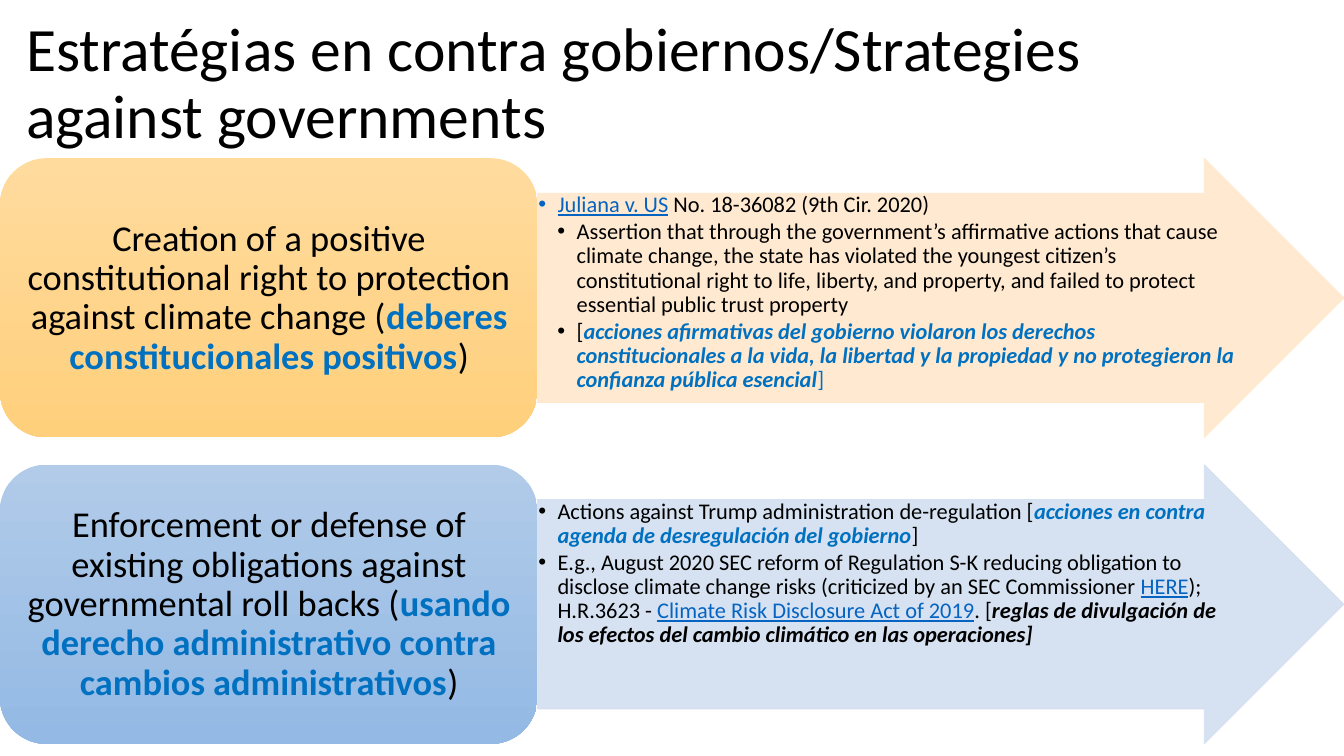
from lxml import etree
from pptx import Presentation
from pptx.dml.color import RGBColor
from pptx.enum.shapes import MSO_SHAPE
from pptx.enum.text import MSO_ANCHOR, PP_ALIGN
from pptx.oxml.ns import qn
from pptx.util import Inches, Pt

ARROW = MSO_SHAPE.RIGHT_ARROW
ROUNDED = MSO_SHAPE.ROUNDED_RECTANGLE
TOP, MIDDLE = MSO_ANCHOR.TOP, MSO_ANCHOR.MIDDLE
LEFT, CENTER = PP_ALIGN.LEFT, PP_ALIGN.CENTER
BLACK, BLUE, LINK = "000000", "0070C0", "0563C1"


def rgb(value):
    return RGBColor.from_string(value)


class StrategySlide:
    """Draws titles, strategy cards and detail arrows in one style on a slide."""

    font = "Calibri"
    indent = 0.19

    def __init__(self, slide):
        self.slide = slide

    def shape(self, kind, left, top, width, height):
        shape = self.slide.shapes.add_shape(
            kind, Inches(left), Inches(top), Inches(width), Inches(height))
        shape.shadow.inherit = False
        return shape

    def arrow(self, top, color):
        arrow = self.shape(ARROW, 5.33, top, 8, 2.77)
        arrow.adjustments[0] = 0.75
        arrow.adjustments[1] = 0.5
        arrow.fill.solid()
        arrow.fill.fore_color.rgb = rgb(color)
        arrow.line.color.rgb = rgb(color)
        arrow.line.width = Pt(0.5)
        for node in arrow.element.spPr.iter(qn("a:srgbClr")):
            etree.SubElement(node, qn("a:alpha"), val="90000")

    def card(self, top, colors):
        card = self.shape(ROUNDED, 0, top, 5.33, 2.77)
        card.fill.gradient()
        card.fill.gradient_angle = 270
        for stop, color in zip(card.fill.gradient_stops, colors):
            stop.color.rgb = rgb(color)
        card.line.fill.background()

    def bullet(self, paragraph, level, color):
        properties = paragraph._p.get_or_add_pPr()
        properties.set("marL", str(Inches(self.indent * level)))
        properties.set("indent", str(-Inches(self.indent)))
        bullet_color = etree.SubElement(properties, qn("a:buClr"))
        etree.SubElement(bullet_color, qn("a:srgbClr"), val=color)
        etree.SubElement(properties, qn("a:buFont"), typeface="Arial")
        etree.SubElement(properties, qn("a:buChar"), char="•")

    def text(self, box, paragraphs, size, anchor=MIDDLE, align=LEFT,
             insets=(0.1, 0.05), after=0):
        frame = self.slide.shapes.add_textbox(*map(Inches, box)).text_frame
        frame.word_wrap = True
        frame.vertical_anchor = anchor
        frame.margin_left = frame.margin_right = Inches(insets[0])
        frame.margin_top = frame.margin_bottom = Inches(insets[1])
        for number, (level, runs) in enumerate(paragraphs):
            paragraph = frame.add_paragraph() if number else frame.paragraphs[0]
            paragraph.alignment = align
            paragraph.line_spacing = 0.9
            paragraph.space_after = Pt(after)
            if level:
                self.bullet(paragraph, level, runs[0][1])
            paragraph.font.name = self.font
            paragraph.font.size = Pt(size)
            for words, color, marks in runs:
                run = paragraph.add_run()
                run.text = words
                run.font.color.rgb = rgb(color)
                run.font.bold = "b" in marks
                run.font.italic = "i" in marks
                run.font.underline = "u" in marks

    def strategy(self, top, arrow_color, card_colors, heading, details):
        self.arrow(top, arrow_color)
        self.text((5.33, top + 0.34, 6.96, 2.08), details, 16, anchor=TOP,
                  insets=(0.01, 0.01), after=2)
        self.card(top, card_colors)
        self.text((0.14, top + 0.14, 5.06, 2.5), [(0, heading)], 26,
                  align=CENTER, insets=(0.11, 0.05))


def main():
    deck = Presentation()
    deck.slide_width, deck.slide_height = Inches(13.33), Inches(7.5)
    page = StrategySlide(deck.slides.add_slide(deck.slide_layouts[6]))

    title = "Estratégias en contra gobiernos/Strategies against governments"
    page.text((0.16, 0.12, 11.5, 1.45), [(0, [(title, BLACK, "")])], 44)

    strategies = [
        ("FFE8CC", ("FFDB9E", "FFD07C"), [
            ("Creation of a positive constitutional right to protection "
             "against climate change (", BLACK, ""),
            ("deberes constitucionales positivos", BLUE, "b"),
            (")", BLACK, ""),
        ], [
            (1, [("Juliana v. US", LINK, "u"),
                 (" No. 18-36082 (9th Cir. 2020)", BLACK, "")]),
            (2, [("Assertion that through the government’s affirmative actions "
                  "that cause climate change, the state has violated the "
                  "youngest citizen’s constitutional right to life, liberty, "
                  "and property, and failed to protect essential public trust "
                  "property", BLACK, "")]),
            (2, [("[", BLACK, ""),
                 ("acciones afirmativas del gobierno violaron los derechos "
                  "constitucionales a la vida, la libertad y la propiedad y no "
                  "protegieron la confianza pública esencial", BLUE, "bi"),
                 ("]", BLUE, "")]),
        ]),
        ("D2DFF0", ("B1CBE9", "93B9E4"), [
            ("Enforcement or defense of existing obligations against "
             "governmental roll backs (", BLACK, ""),
            ("usando derecho administrativo contra cambios administrativos",
             BLUE, "b"),
            (")", BLACK, ""),
        ], [
            (1, [("Actions against Trump administration de-regulation [",
                  BLACK, ""),
                 ("acciones en contra agenda de desregulación del gobierno",
                  BLUE, "bi"),
                 ("]", BLACK, "")]),
            (1, [("E.g., August 2020 SEC reform of Regulation S-K reducing "
                  "obligation to disclose climate change risks (criticized by "
                  "an SEC Commissioner ", BLACK, ""),
                 ("HERE", LINK, "u"),
                 ("); H.R.3623 - ", BLACK, ""),
                 ("Climate Risk Disclosure Act of 2019", LINK, "u"),
                 (". [", BLACK, ""),
                 ("reglas de divulgación de los efectos del cambio climático "
                  "en las operaciones]", BLACK, "bi")]),
        ]),
    ]
    for row, strategy in enumerate(strategies):
        page.strategy(1.57 + 3.04 * row, *strategy)

    deck.save("out.pptx")


if __name__ == "__main__":
    main()
